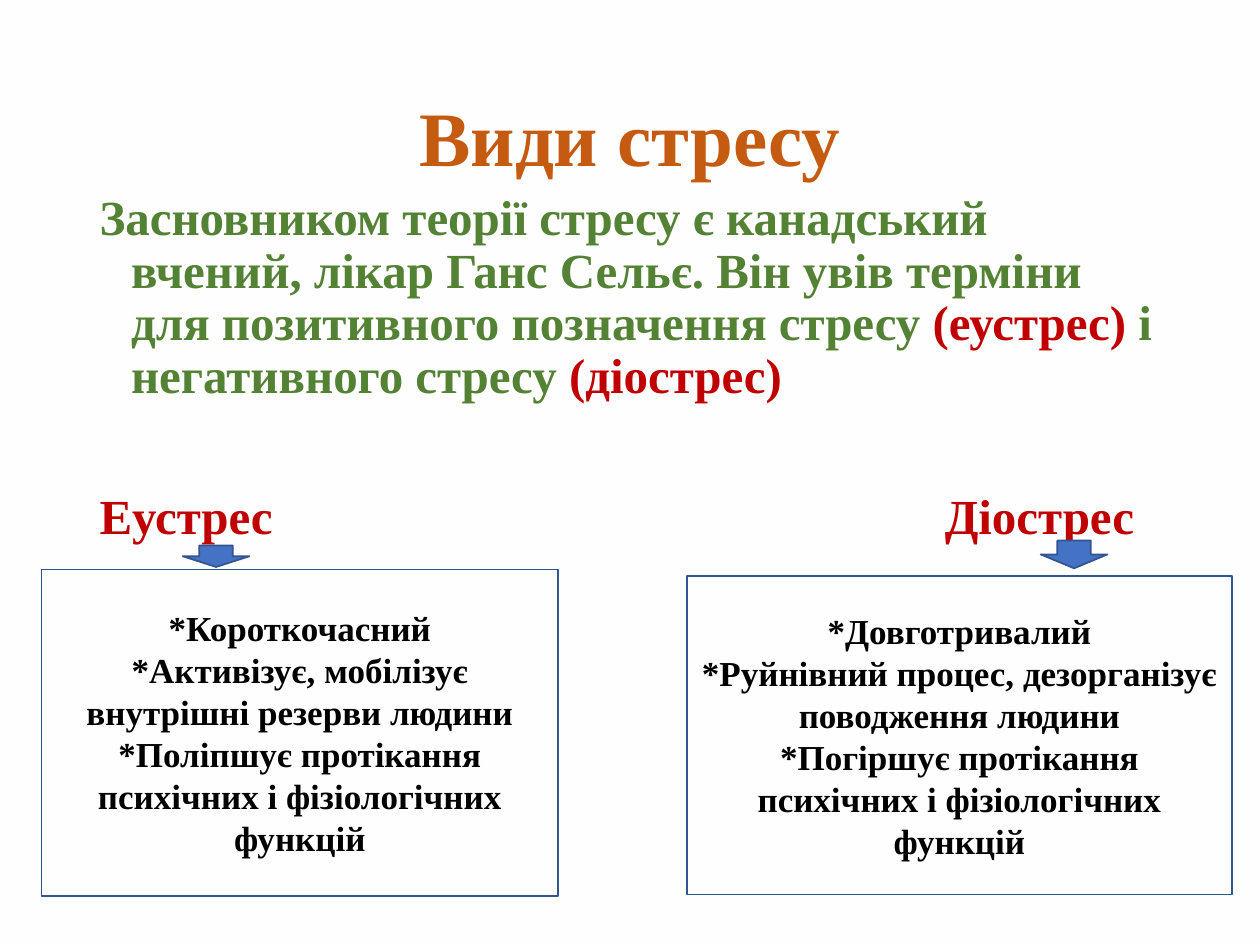
from dataclasses import dataclass

from lxml import etree
from pptx import Presentation
from pptx.dml.color import RGBColor
from pptx.enum.shapes import MSO_SHAPE
from pptx.enum.text import MSO_ANCHOR, MSO_AUTO_SIZE, PP_ALIGN
from pptx.oxml.ns import qn
from pptx.util import Inches, Pt

RECTANGLE, DOWN_ARROW = MSO_SHAPE.RECTANGLE, MSO_SHAPE.DOWN_ARROW
MIDDLE, TOP = MSO_ANCHOR.MIDDLE, MSO_ANCHOR.TOP
CENTER, LEFT = PP_ALIGN.CENTER, PP_ALIGN.LEFT
NO_AUTOFIT = MSO_AUTO_SIZE.NONE

WIDTH, HEIGHT = 10, 7.5
MARGIN = 0.69
FONT = "Times New Roman"
PAPER, BLACK = "FFFEFF", "000000"
ORANGE, GREEN, RED = "C55A11", "548235", "C00000"
BLUE, OUTLINE = "4472C4", "325491"
HANGING = 0.25


@dataclass
class Area:
    left: float
    top: float
    width: float
    height: float

    def lengths(self):
        return [Inches(n) for n in (self.left, self.top, self.width, self.height)]


@dataclass
class StressKind:
    box: Area
    arrow: Area
    traits: list[str]


TITLE_AREA = Area(MARGIN, 0.4, WIDTH - 2 * MARGIN, 1.45)
BODY_AREA = Area(MARGIN, 1.48, WIDTH - 2 * MARGIN, 5.28)
SECOND_LABEL_AREA = Area(7.4, 3.86, 1.91, 0.55)
KINDS = [
    StressKind(Area(0.33, 4.52, 4.1, 2.59), Area(1.45, 4.33, 0.53, 0.17), [
        "*Короткочасний",
        "*Активізує, мобілізує внутрішні резерви людини",
        "*Поліпшує протікання психічних і фізіологічних функцій",
    ]),
    StressKind(Area(5.45, 4.57, 4.33, 2.53), Area(8.26, 4.29, 0.53, 0.22), [
        "*Довготривалий",
        "*Руйнівний процес, дезорганізує поводження людини",
        "*Погіршує протікання психічних і фізіологічних функцій",
    ]),
]
INTRODUCTION = [
    ("Засновником теорії стресу є канадський вчений, лікар Ганс Сельє. "
     "Він увів терміни для позитивного позначення стресу ", GREEN),
    ("(еустрес) ", RED),
    ("і негативного стресу ", GREEN),
    ("(діострес)", RED),
]


def color(value: str) -> RGBColor:
    return RGBColor.from_string(value)


def set_font(para, size: float, value: str) -> None:
    font = para.font
    font.name, font.size, font.bold = FONT, Pt(size), True
    font.color.rgb = color(value)


def place(shape, area: Area, anchor) -> None:
    shape.left, shape.top, shape.width, shape.height = area.lengths()
    frame = shape.text_frame
    frame.auto_size, frame.vertical_anchor, frame.word_wrap = NO_AUTOFIT, anchor, True


def format_body(para, space_before: float = 0, hanging: float = HANGING) -> None:
    para.alignment, para.line_spacing, para.space_before = LEFT, 0.9, Pt(space_before)
    properties = para._p.get_or_add_pPr()
    properties.set("marL", str(Inches(hanging)))
    properties.set("indent", str(-Inches(hanging)))
    etree.SubElement(properties, qn("a:buNone"))
    set_font(para, 28, RED)


def add_outlined(page, kind, area: Area, fill: str):
    shape = page.shapes.add_shape(kind, *area.lengths())
    shape.shadow.inherit = False
    shape.fill.solid()
    shape.fill.fore_color.rgb = color(fill)
    shape.line.color.rgb = color(OUTLINE)
    shape.line.width = Pt(1)
    return shape


def add_traits(page, kind: StressKind) -> None:
    frame = add_outlined(page, RECTANGLE, kind.box, PAPER).text_frame
    frame.word_wrap, frame.vertical_anchor = True, MIDDLE
    for index, trait in enumerate(kind.traits):
        para = frame.add_paragraph() if index else frame.paragraphs[0]
        para.text, para.alignment = trait, CENTER
        set_font(para, 20, BLACK)


def main() -> None:
    deck = Presentation()
    deck.slide_width, deck.slide_height = Inches(WIDTH), Inches(HEIGHT)
    page = deck.slides.add_slide(deck.slide_layouts[1])
    page.background.fill.solid()
    page.background.fill.fore_color.rgb = color(PAPER)

    title, body = page.shapes.title, page.placeholders[1]
    place(title, TITLE_AREA, MIDDLE)
    heading = title.text_frame.paragraphs[0]
    heading.text, heading.alignment, heading.line_spacing = "Види стресу", CENTER, 0.9
    set_font(heading, 44, ORANGE)

    place(body, BODY_AREA, TOP)
    introduction = body.text_frame.paragraphs[0]
    format_body(introduction)
    for text, value in INTRODUCTION:
        span = introduction.add_run()
        span.text, span.font.color.rgb = text, color(value)
    first_label = body.text_frame.add_paragraph()
    first_label.text = "Еустрес"
    format_body(first_label, space_before=50)

    label_box = page.shapes.add_textbox(*SECOND_LABEL_AREA.lengths())
    place(label_box, SECOND_LABEL_AREA, TOP)
    second_label = label_box.text_frame.paragraphs[0]
    second_label.text = "Діострес"
    format_body(second_label, hanging=0)

    for kind in KINDS:
        add_traits(page, kind)
        add_outlined(page, DOWN_ARROW, kind.arrow, BLUE)
    deck.save("out.pptx")


if __name__ == "__main__":
    main()
